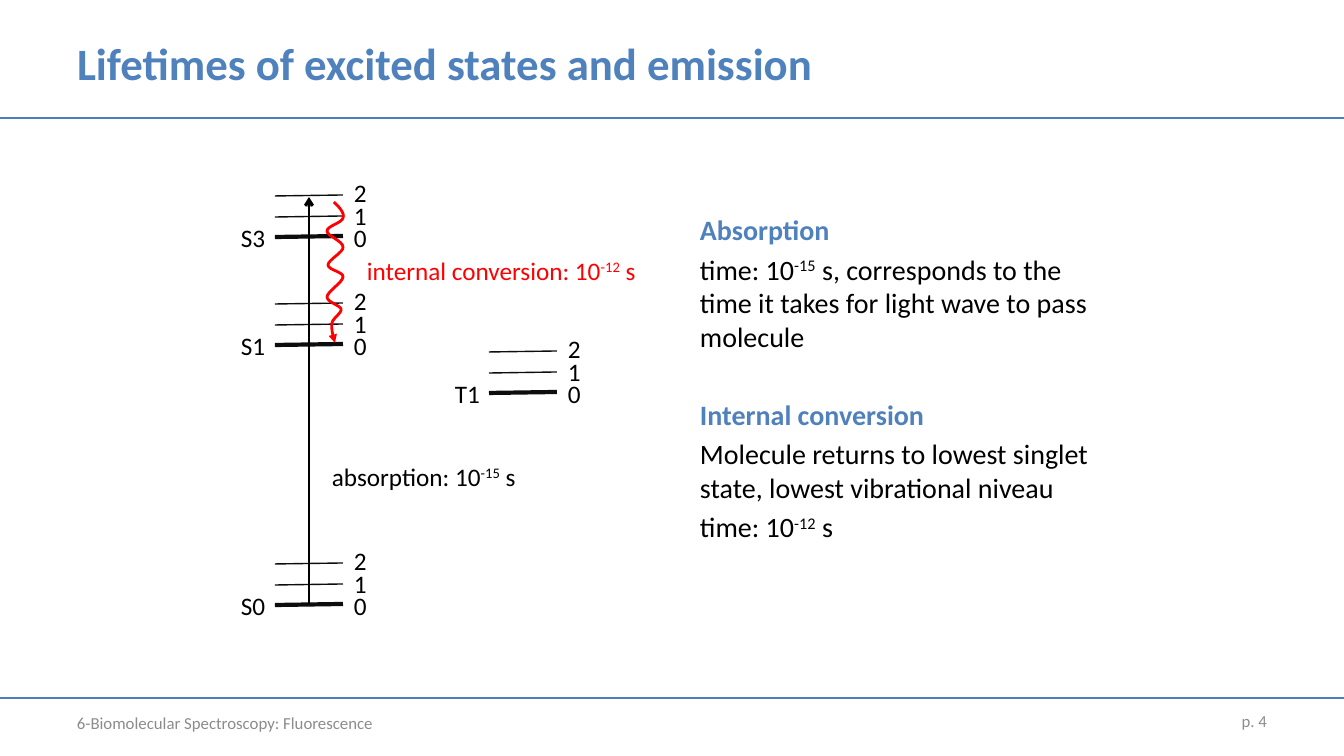
from lxml import etree
from pptx import Presentation
from pptx.dml.color import RGBColor
from pptx.enum.shapes import MSO_CONNECTOR
from pptx.enum.text import MSO_ANCHOR, MSO_AUTO_SIZE, PP_ALIGN
from pptx.oxml.ns import qn
from pptx.util import Pt

STRAIGHT = MSO_CONNECTOR.STRAIGHT
TOP, MIDDLE = MSO_ANCHOR.TOP, MSO_ANCHOR.MIDDLE
LEFT, RIGHT = PP_ALIGN.LEFT, PP_ALIGN.RIGHT
NO_AUTOFIT = MSO_AUTO_SIZE.NONE

EMU_PER_PX = 914400 / 100.8
SLIDE_SIZE = (1344, 756)
FONT = "Calibri"
COLORS = {
    "heading": "4F81BD",
    "rule": "4B7EBC",
    "footer": "8C8C8C",
    "level": "0D0D0D",
    "text": "000000",
    "conversion": "FF0000",
}

TITLE = "Lifetimes of excited states and emission"
TITLE_BOX = (67, 0, 1210, 126)
RULES = [118, 698]
FOOTERS = [
    ("6-Biomolecular Spectroscopy: Fluorescence", (67, 703, 425, 40), LEFT),
    ("p. 4", (964, 701, 313, 40), RIGHT),
]

BODY_BOX = (690, 208, 435, 467)
BODY = [
    ("Absorption", True, 0),
    ("time: 10^-15^ s, corresponds to the time it takes for light wave to pass molecule", False, 4),
    ("Internal conversion", True, 32),
    ("Molecule returns to lowest singlet state, lowest vibrational niveau", False, 4),
    ("time: 10^-12^ s", False, 4),
]

STATES = [("S0", 275, 605), ("S1", 275, 345), ("T1", 489, 393), ("S3", 275, 237)]
LEVELS = [("0", 0, -20, 3), ("1", -20, -42, 1), ("2", -41, -65, 1)]
LEVEL_WIDTH = 68
LABEL_HEIGHT = 40
NAME_WIDTH, NUMBER_WIDTH = 45, 33
PROCESSES = [
    ("absorption: 10^-15^ s", (322, 456, 210, 40), "text"),
    ("internal conversion: 10^-12^ s", (357, 250, 295, 40), "conversion"),
]
ABSORPTION_ARROW = ((309, 604), (309, 197))
WAVE_START = (334, 202)
WAVE_CURVES = [
    ((339, 207), (345, 213), (343, 218)),
    ((342, 223), (327, 226), (327, 231)),
    ((327, 236), (343, 241), (343, 247)),
    ((344, 252), (328, 260), (328, 265)),
    ((328, 270), (344, 272), (343, 277)),
    ((343, 282), (327, 292), (327, 297)),
    ((327, 302), (341, 306), (341, 309)),
    ((342, 313), (333, 318), (332, 323)),
    ((331, 329), (333, 336), (335, 343)),
]
CURVE_STEPS = 8


def emu(*lengths):
    return [round(length * EMU_PER_PX) for length in lengths]


def color(name):
    return RGBColor.from_string(COLORS[name])


def set_all(target, values):
    for name, value in values.items():
        setattr(target, name, value)


def write(paragraph, text, size, color_name, bold=False):
    for index, part in enumerate(text.split("^")):
        run = paragraph.add_run()
        run.text = part
        set_all(run.font, {"name": FONT, "size": Pt(size), "bold": bold})
        run.font.color.rgb = color(color_name)
        if index % 2:
            run.font._element.set("baseline", "30000")


def add_text(slide, text, box, size, color_name, align=LEFT, anchor=TOP, wrap=False):
    frame = slide.shapes.add_textbox(*emu(*box)).text_frame
    set_all(frame, {"word_wrap": wrap, "vertical_anchor": anchor})
    frame.paragraphs[0].alignment = align
    write(frame.paragraphs[0], text, size, color_name)


def style_line(shape, color_name, width, arrow=None):
    shape.line.color.rgb = color(color_name)
    shape.line.width = Pt(width)
    if arrow:
        line = shape.line._get_or_add_ln()
        etree.SubElement(line, qn("a:tailEnd"), type=arrow)


def add_line(slide, start, end, color_name, width, arrow=None):
    connector = slide.shapes.add_connector(STRAIGHT, *emu(*start, *end))
    style_line(connector, color_name, width, arrow)
    etree.SubElement(connector._element.spPr, qn("a:effectLst"))


def add_title(slide):
    title = slide.shapes.title
    set_all(title, dict(zip(("left", "top", "width", "height"), emu(*TITLE_BOX))))
    frame = title.text_frame
    set_all(frame, {"vertical_anchor": MIDDLE, "word_wrap": True, "auto_size": NO_AUTOFIT})
    frame.paragraphs[0].alignment = LEFT
    write(frame.paragraphs[0], TITLE, 32, "heading", True)


def add_body(slide):
    frame = slide.shapes.add_textbox(*emu(*BODY_BOX)).text_frame
    frame.word_wrap = True
    for index, (text, heading, space) in enumerate(BODY):
        paragraph = frame.add_paragraph() if index else frame.paragraphs[0]
        paragraph.space_before = Pt(space)
        write(paragraph, text, 20, "heading" if heading else "text", heading)


def add_state(slide, name, left, ground):
    right = left + LEVEL_WIDTH
    name_box = (left - NAME_WIDTH + 1, ground - 20, NAME_WIDTH, LABEL_HEIGHT)
    add_text(slide, name, name_box, 18, "text")
    for number, line_offset, label_offset, width in LEVELS:
        y = ground + line_offset
        add_line(slide, (left, y), (right, y - 1), "level", width)
        number_box = (right + 1, ground + label_offset, NUMBER_WIDTH, LABEL_HEIGHT)
        add_text(slide, number, number_box, 18, "text")


def curve_point(points, t):
    weights = ((1 - t) ** 3, 3 * t * (1 - t) ** 2, 3 * t * t * (1 - t), t ** 3)
    return [sum(w * p[axis] for w, p in zip(weights, points)) for axis in (0, 1)]


def add_wave(slide):
    points, start = [], WAVE_START
    for curve in WAVE_CURVES:
        for step in range(1, CURVE_STEPS + 1):
            points.append(emu(*curve_point((start, *curve), step / CURVE_STEPS)))
        start = curve[-1]
    builder = slide.shapes.build_freeform(*emu(*WAVE_START))
    builder.add_line_segments(points, close=False)
    wave = builder.convert_to_shape()
    wave.shadow.inherit = False
    wave.fill.background()
    style_line(wave, "conversion", 2, "triangle")


def main():
    presentation = Presentation()
    presentation.slide_width, presentation.slide_height = emu(*SLIDE_SIZE)
    slide = presentation.slides.add_slide(presentation.slide_layouts[5])
    for y in RULES:
        add_line(slide, (0, y), (SLIDE_SIZE[0], y), "rule", 1.5)
    add_title(slide)
    add_body(slide)
    for text, box, align in FOOTERS:
        add_text(slide, text, box, 12, "footer", align, MIDDLE, True)
    for state in STATES:
        add_state(slide, *state)
    add_line(slide, *ABSORPTION_ARROW, "text", 2, "arrow")
    for text, box, color_name in PROCESSES:
        add_text(slide, text, box, 18, color_name)
    add_wave(slide)
    presentation.save("out.pptx")


if __name__ == "__main__":
    main()
